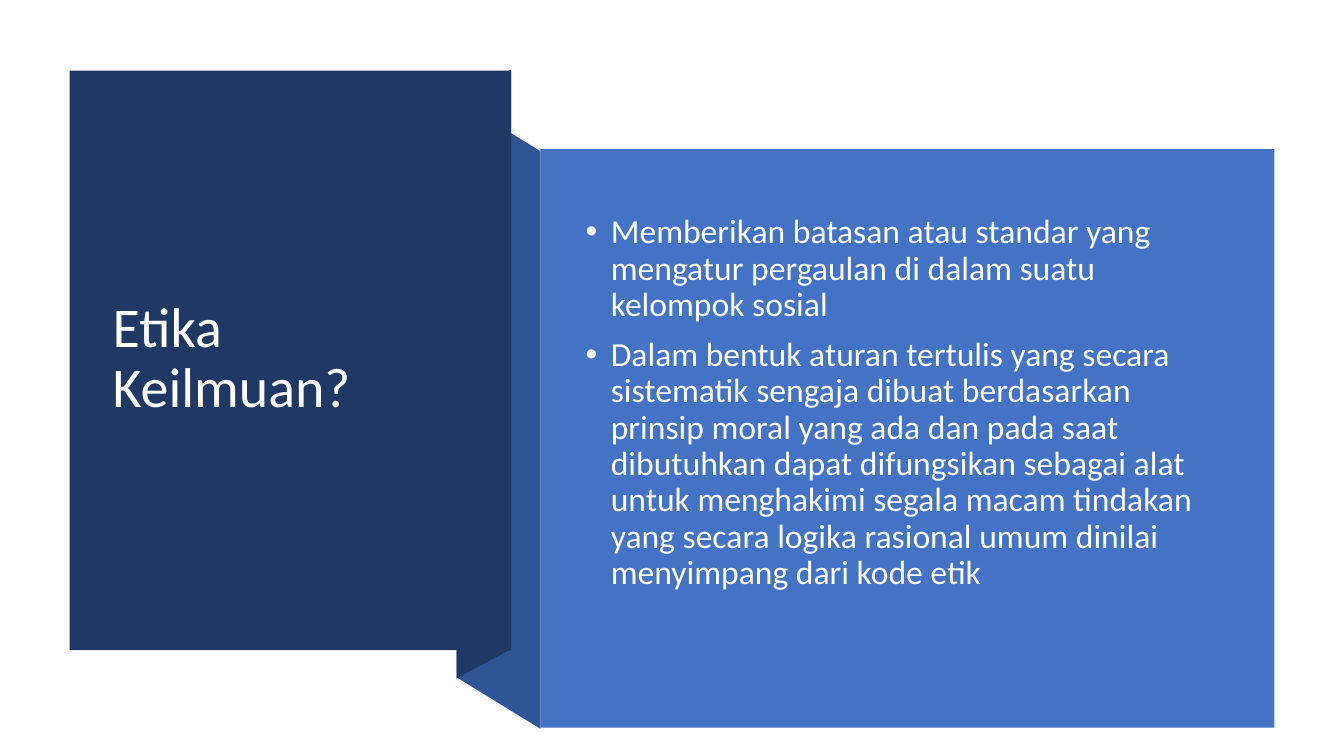
from pptx import Presentation
from pptx.dml.color import RGBColor
from pptx.enum.shapes import MSO_SHAPE
from pptx.enum.text import MSO_ANCHOR
from pptx.oxml import parse_xml
from pptx.oxml.ns import nsdecls
from pptx.util import Inches, Pt

RECTANGLE = MSO_SHAPE.RECTANGLE
MIDDLE = MSO_ANCHOR.MIDDLE
NAVY, FOLD_BLUE, BLUE = "203864", "2F5597", "4472C4"

# Edges of the folded ribbon, in inches
TITLE_LEFT, TITLE_RIGHT = 0.69, 5.07
TITLE_TOP, TITLE_BOTTOM = 0.7, 6.45
FOLD_LEFT = 4.53
BODY_LEFT, BODY_RIGHT = 5.36, 12.64
BODY_TOP, BODY_BOTTOM = 1.48, 7.22

TITLE = "Etika Keilmuan?"
POINTS = [
    "Memberikan batasan atau standar yang mengatur pergaulan di dalam suatu "
    "kelompok sosial",
    "Dalam bentuk aturan tertulis yang secara sistematik sengaja dibuat "
    "berdasarkan prinsip moral yang ada dan pada saat dibutuhkan dapat "
    "difungsikan sebagai alat untuk menghakimi segala macam tindakan yang "
    "secara logika rasional umum dinilai menyimpang dari kode etik",
]


def paint(shape, color):
    shape.shadow.inherit = False
    shape.fill.solid()
    shape.fill.fore_color.rgb = RGBColor.from_string(color)
    shape.line.fill.background()


def add_text(box, lines, size, color):
    """Add a middle-anchored text box with one paragraph per line."""
    frame = slide.shapes.add_textbox(*map(Inches, box)).text_frame
    frame.word_wrap = True
    frame.vertical_anchor = MIDDLE
    frame.text = "\n".join(lines)
    for paragraph in frame.paragraphs:
        paragraph.line_spacing = 0.9
        font = paragraph.runs[0].font
        font.name = "Calibri"
        font.size = Pt(size)
        font.color.rgb = RGBColor.from_string(color)
    return frame


presentation = Presentation()
presentation.slide_width = Inches(13.33)
presentation.slide_height = Inches(7.5)
slide = presentation.slides.add_slide(presentation.slide_layouts[6])

# The two folds that join the panels
folds = [
    (FOLD_BLUE, [(BODY_LEFT, 7.23), (FOLD_LEFT, 6.72),
                 (FOLD_LEFT, 0.99), (BODY_LEFT, 1.5)]),
    (NAVY, [(TITLE_RIGHT, 6.44), (FOLD_LEFT, 6.73),
            (FOLD_LEFT, 0.98), (TITLE_RIGHT, 0.69)]),
]
for color, corners in folds:
    points = [(Inches(x), Inches(y)) for x, y in corners]
    builder = slide.shapes.build_freeform(*points[0])
    builder.add_line_segments(points[1:], close=True)
    paint(builder.convert_to_shape(), color)

panels = [
    (NAVY, TITLE_LEFT, TITLE_TOP, TITLE_RIGHT, TITLE_BOTTOM),
    (BLUE, BODY_LEFT, BODY_TOP, BODY_RIGHT, BODY_BOTTOM),
]
for color, left, top, right, bottom in panels:
    panel = slide.shapes.add_shape(
        RECTANGLE, Inches(left), Inches(top),
        Inches(right - left), Inches(bottom - top))
    paint(panel, color)

add_text((1.02, 1.07, 3.6, 4.99), [TITLE], 40, "FFFFFF")

body = add_text((5.71, 1.88, 6.51, 4.24), POINTS, 24, "FEFFFF")
for paragraph in body.paragraphs:
    paragraph.space_before = Pt(10)
    properties = paragraph._p.get_or_add_pPr()
    properties.set("marL", str(Inches(0.25)))
    properties.set("indent", str(-Inches(0.25)))
    for bullet in ('<a:buFont {} typeface="Arial"/>', '<a:buChar {} char="•"/>'):
        properties.append(parse_xml(bullet.format(nsdecls("a"))))

presentation.save("out.pptx")
